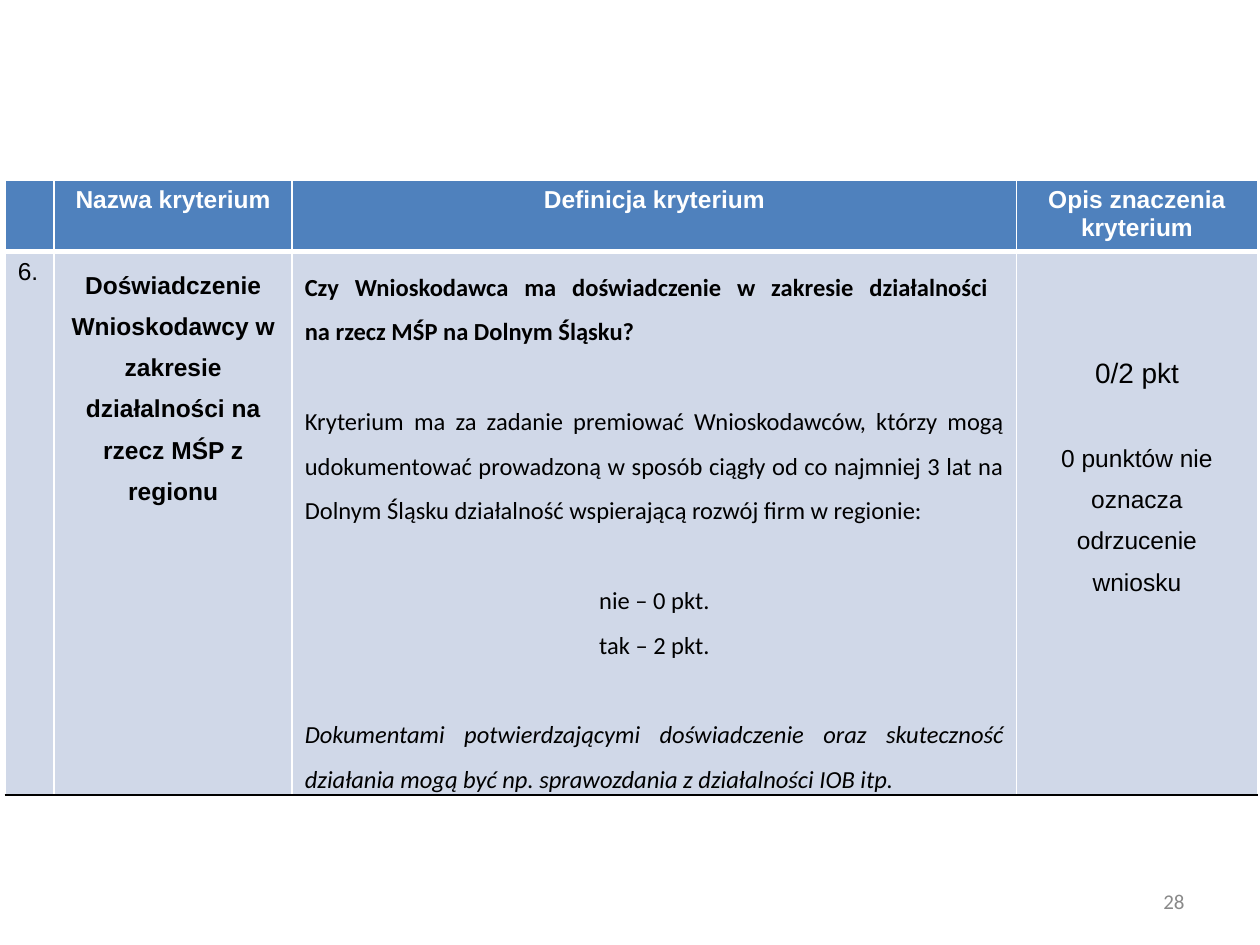
"""Build the slide with the table of criterion 6 and its scoring."""
from dataclasses import dataclass
from typing import Any

import lxml.etree
import pptx
import pptx.dml.color
import pptx.enum.text
import pptx.oxml.ns
import pptx.util

Pt = pptx.util.Pt
Align = pptx.enum.text.PP_ALIGN
WHITE, BLACK, GREY = "FFFFFF", "000000", "898989"
HEADER_BLUE, BODY_BLUE = "4F81BD", "D0D8E8"
COLUMN_WIDTHS = (28, 136, 414, 137.5)
ROW_HEIGHTS = (40, 310.5)


@dataclass
class TextLine:
    text: str
    align: Any = Align.CENTER
    font: str = "Arial"
    size: float = 14
    bold: bool = False
    italic: bool = False
    color: str = BLACK
    spacing: float = 1.5
    gap: float = 0


@dataclass
class CellContent:
    lines: list[TextLine]
    top: float = 3.6
    bottom: float = 3.6


def rgb(value: str) -> pptx.dml.color.RGBColor:
    """Turn a hex string into a colour."""
    return pptx.dml.color.RGBColor.from_string(value)


def set_format(target: Any, values: dict[str, Any]) -> None:
    """Set each named attribute on the target."""
    for name, value in values.items():
        setattr(target, name, value)


def write_lines(text_frame: Any, lines: list[TextLine]) -> None:
    """Write the lines as formatted paragraphs."""
    for index, line in enumerate(lines):
        paragraph = text_frame.add_paragraph() if index else text_frame.paragraphs[0]
        set_format(paragraph, {
            "text": line.text, "alignment": line.align,
            "line_spacing": line.spacing, "space_before": Pt(line.gap),
        })
        for run in paragraph.runs:
            set_format(run.font, {
                "name": line.font, "size": Pt(line.size),
                "bold": line.bold, "italic": line.italic,
            })
            run.font.color.rgb = rgb(line.color)


def add_border(cell: Any, side: str, color: str, width: float) -> None:
    """Draw one side of a cell border."""
    qn = pptx.oxml.ns.qn
    properties = cell._tc.get_or_add_tcPr()
    line = lxml.etree.SubElement(properties, qn(f"a:ln{side}"), w=str(Pt(width)))
    fill = lxml.etree.SubElement(line, qn("a:solidFill"))
    lxml.etree.SubElement(fill, qn("a:srgbClr"), val=color)


def fill_cell(cell: Any, content: CellContent, is_header: bool) -> None:
    """Format one table cell and write its text."""
    bottom = (WHITE, 3) if is_header else (BLACK, 1)
    top = (WHITE, 1 if is_header else 3)
    for side, border in {"L": (WHITE, 1), "R": (WHITE, 1), "T": top, "B": bottom}.items():
        add_border(cell, side, *border)
    cell.fill.solid()
    cell.fill.fore_color.rgb = rgb(HEADER_BLUE if is_header else BODY_BLUE)
    set_format(cell, {"margin_top": Pt(content.top), "margin_bottom": Pt(content.bottom)})
    write_lines(cell.text_frame, content.lines)


def header(text: str) -> CellContent:
    """Describe a header cell."""
    return CellContent([TextLine(text, bold=True, color=WHITE, spacing=1)])


def definition(text: str, align: Any = Align.JUSTIFY, **options: Any) -> TextLine:
    """Describe a paragraph of the criterion definition."""
    return TextLine(text, align, "Calibri", **options)


LINE_GAP = 25.6
ROWS = [
    [header(text) for text in
     ("", "Nazwa kryterium", "Definicja kryterium", "Opis znaczenia kryterium")],
    [
        CellContent([TextLine("6.", Align.JUSTIFY, spacing=1)]),
        CellContent([TextLine(
            "Doświadczenie Wnioskodawcy w zakresie działalności na rzecz MŚP z regionu",
            bold=True)]),
        CellContent([
            definition("Czy Wnioskodawca ma doświadczenie w zakresie działalności \n"
                       "na rzecz MŚP na Dolnym Śląsku?", bold=True),
            definition("Kryterium ma za zadanie premiować Wnioskodawców, którzy mogą "
                       "udokumentować prowadzoną w sposób ciągły od co najmniej 3 lat na "
                       "Dolnym Śląsku działalność wspierającą rozwój firm w regionie:",
                       gap=LINE_GAP),
            definition("nie – 0 pkt.", Align.CENTER, gap=LINE_GAP),
            definition("tak – 2 pkt.", Align.CENTER),
            definition("Dokumentami potwierdzającymi doświadczenie oraz skuteczność "
                       "działania mogą być np. sprawozdania z działalności IOB itp.",
                       italic=True, gap=LINE_GAP),
        ], bottom=0),
        CellContent([
            TextLine("0/2 pkt", size=16),
            TextLine("0 punktów nie oznacza odrzucenie wniosku", gap=24),
        ], top=52),
    ],
]


def add_criteria_table(slide: Any) -> None:
    """Add the criteria table."""
    table = slide.shapes.add_table(
        len(ROWS), len(COLUMN_WIDTHS), Pt(3), Pt(103),
        Pt(sum(COLUMN_WIDTHS)), Pt(sum(ROW_HEIGHTS))).table
    table.horz_banding = False
    for column, width in zip(table.columns, COLUMN_WIDTHS):
        column.width = Pt(width)
    for row, height, contents in zip(table.rows, ROW_HEIGHTS, ROWS):
        row.height = Pt(height)
        for cell, content in zip(row.cells, contents):
            fill_cell(cell, content, contents is ROWS[0])


def add_slide_number(slide: Any) -> None:
    """Add the slide number at the lower right."""
    text_frame = slide.shapes.add_textbox(Pt(516), Pt(500.5), Pt(168), Pt(29)).text_frame
    set_format(text_frame, {
        "word_wrap": True, "vertical_anchor": pptx.enum.text.MSO_ANCHOR.MIDDLE,
    })
    write_lines(text_frame, [TextLine("28", Align.RIGHT, "Calibri", 12, color=GREY, spacing=1)])


def main() -> None:
    """Build and save the presentation."""
    presentation = pptx.Presentation()
    set_format(presentation, {"slide_width": Pt(720), "slide_height": Pt(540)})
    slide = presentation.slides.add_slide(presentation.slide_layouts[6])
    add_slide_number(slide)
    add_criteria_table(slide)
    presentation.save("out.pptx")


if __name__ == "__main__":
    main()
